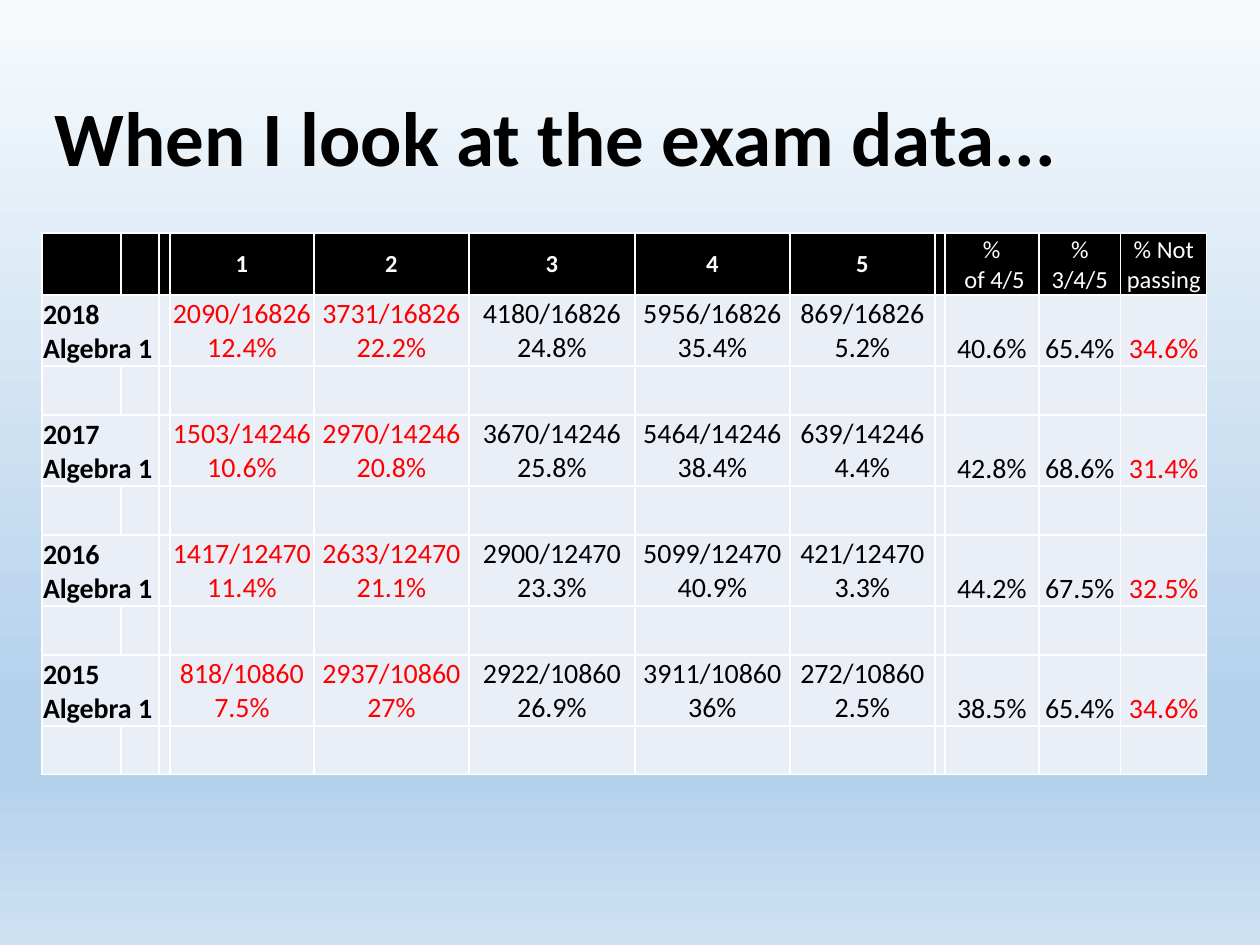
from lxml.etree import SubElement
from pptx import Presentation
from pptx.dml.color import RGBColor
from pptx.enum.text import MSO_ANCHOR, PP_ALIGN
from pptx.oxml import parse_xml
from pptx.oxml.ns import nsdecls, qn
from pptx.util import Pt

SCALE = 914400 / 126
BLACK, WHITE, RED, PALE = "000000", "FFFFFF", "FF0000", "EAEFF7"
BACKGROUND_STOPS = [(0, "F7FAFD"), (74, "B5D2EC"), (83, "B5D2EC"), (100, "CEE1F2")]

TITLE = "When I look at the exam data..."
LEVELS = ["1", "2", "3", "4", "5"]
SUMMARIES = ["%\n of 4/5", "%\n3/4/5", "% Not passing"]
YEARS = [
    ("2018 Algebra 1", 16826,
     [(2090, "12.4%"), (3731, "22.2%"), (4180, "24.8%"), (5956, "35.4%"), (869, "5.2%")],
     ["40.6%", "65.4%", "34.6%"]),
    ("2017 Algebra 1", 14246,
     [(1503, "10.6%"), (2970, "20.8%"), (3670, "25.8%"), (5464, "38.4%"), (639, "4.4%")],
     ["42.8%", "68.6%", "31.4%"]),
    ("2016 Algebra 1", 12470,
     [(1417, "11.4%"), (2633, "21.1%"), (2900, "23.3%"), (5099, "40.9%"), (421, "3.3%")],
     ["44.2%", "67.5%", "32.5%"]),
    ("2015 Algebra 1", 10860,
     [(818, "7.5%"), (2937, "27%"), (2922, "26.9%"), (3911, "36%"), (272, "2.5%")],
     ["38.5%", "65.4%", "34.6%"]),
]
COLUMN_WIDTHS = [79, 38, 11, 144, 155, 166, 155, 145, 10, 94, 82, 86]
ROW_HEIGHTS = [62] + [71, 49] * len(YEARS)
FIRST_LEVEL, FIRST_SUMMARY = 3, 9
RED_COLUMNS = {3, 4, 11}


def px(length):
    return round(length * SCALE)


def color(value):
    return RGBColor.from_string(value)


def write(frame, text, size=16, ink=BLACK, bold=False, align=PP_ALIGN.LEFT, spacing=None):
    for index, line in enumerate(text.split("\n")):
        paragraph = frame.add_paragraph() if index else frame.paragraphs[0]
        paragraph.alignment = align
        if spacing:
            paragraph.line_spacing = spacing
        run = paragraph.add_run()
        run.text = line
        run.font.name = "Calibri"
        run.font.size = Pt(size)
        run.font.bold = bold
        run.font.color.rgb = color(ink)


def paint_background(slide):
    fill = slide.background.fill
    fill.gradient()
    fill.gradient_angle = 270
    stop_list = next(slide.background.element.iter(qn("a:gsLst")))
    for stop in list(stop_list):
        stop_list.remove(stop)
    for position, value in BACKGROUND_STOPS:
        stop = SubElement(stop_list, qn("a:gs"), pos=str(position * 1000))
        SubElement(stop, qn("a:srgbClr"), val=value)


def style_cell(cell, fill):
    cell.margin_left = cell.margin_right = cell.margin_top = px(1)
    cell.margin_bottom = 0
    cell.fill.solid()
    cell.fill.fore_color.rgb = color(fill)
    properties = cell._tc.get_or_add_tcPr()
    for index, side in enumerate(["lnL", "lnR", "lnT", "lnB"]):
        properties.insert(index, parse_xml(
            f'<a:{side} {nsdecls("a")} w="12700"><a:solidFill>'
            f'<a:srgbClr val="{WHITE}"/></a:solidFill></a:{side}>'))


def fill_cell(cell, text, anchor, align=PP_ALIGN.CENTER, **format):
    cell.vertical_anchor = anchor
    write(cell.text_frame, text, align=align, **format)


def add_title(slide):
    frame = slide.shapes.add_textbox(px(42), px(50), px(1131), px(183)).text_frame
    frame.word_wrap = True
    frame.vertical_anchor = MSO_ANCHOR.MIDDLE
    write(frame, TITLE, size=44, bold=True, spacing=0.9)


def add_results(slide):
    table = slide.shapes.add_table(
        len(ROW_HEIGHTS), len(COLUMN_WIDTHS), px(42), px(233),
        px(sum(COLUMN_WIDTHS)), px(sum(ROW_HEIGHTS))).table
    for column, width in zip(table.columns, COLUMN_WIDTHS):
        column.width = px(width)
    for row_index, height in enumerate(ROW_HEIGHTS):
        row = table.rows[row_index]
        row.height = px(height)
        for cell in row.cells:
            style_cell(cell, PALE if row_index else BLACK)

    for column, text in enumerate(LEVELS, FIRST_LEVEL):
        fill_cell(table.cell(0, column), text, MSO_ANCHOR.MIDDLE, size=14, ink=WHITE, bold=True)
    for column, text in enumerate(SUMMARIES, FIRST_SUMMARY):
        fill_cell(table.cell(0, column), text, MSO_ANCHOR.BOTTOM, size=14, ink=WHITE)

    for index, (label, total, levels, summaries) in enumerate(YEARS):
        row = 1 + 2 * index
        table.cell(row, 0).merge(table.cell(row, 1))
        fill_cell(table.cell(row, 0), label, MSO_ANCHOR.BOTTOM, align=PP_ALIGN.LEFT, bold=True)
        for column, (count, share) in enumerate(levels, FIRST_LEVEL):
            fill_cell(table.cell(row, column), f"{count}/{total}\n{share}", MSO_ANCHOR.MIDDLE,
                      ink=RED if column in RED_COLUMNS else BLACK)
        for column, share in enumerate(summaries, FIRST_SUMMARY):
            fill_cell(table.cell(row, column), share, MSO_ANCHOR.BOTTOM,
                      ink=RED if column in RED_COLUMNS else BLACK)


def main():
    presentation = Presentation()
    presentation.slide_width, presentation.slide_height = px(1260), px(945)
    slide = presentation.slides.add_slide(presentation.slide_layouts[6])
    paint_background(slide)
    add_title(slide)
    add_results(slide)
    presentation.save("out.pptx")


if __name__ == "__main__":
    main()
